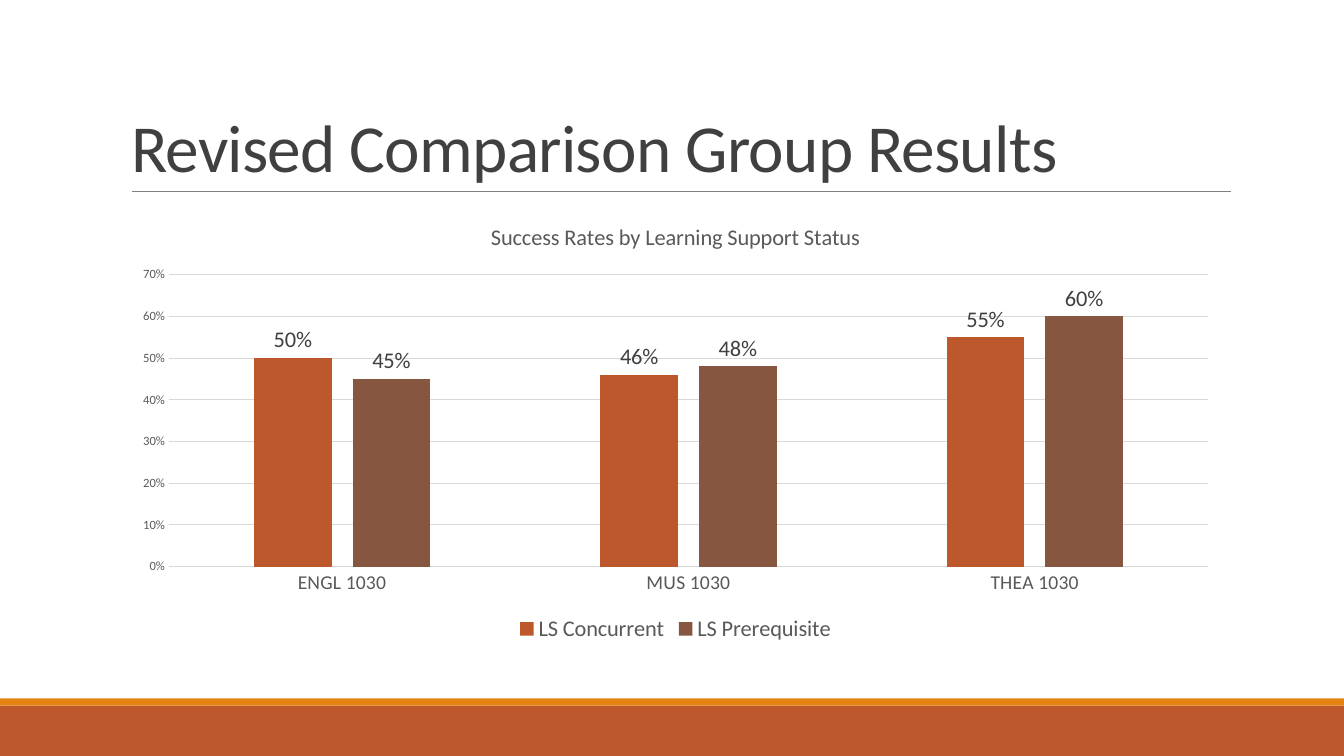
from pptx import Presentation
from pptx.chart.data import CategoryChartData
from pptx.dml.color import RGBColor
from pptx.enum.chart import XL_CHART_TYPE, XL_LABEL_POSITION, XL_LEGEND_POSITION, XL_TICK_MARK
from pptx.enum.shapes import MSO_CONNECTOR, MSO_SHAPE
from pptx.enum.text import MSO_ANCHOR, MSO_AUTO_SIZE, PP_ALIGN
from pptx.oxml.ns import qn
from pptx.util import Inches, Pt
from lxml import etree

COLUMNS = XL_CHART_TYPE.COLUMN_CLUSTERED
OUTSIDE_END = XL_LABEL_POSITION.OUTSIDE_END
LEGEND_BOTTOM = XL_LEGEND_POSITION.BOTTOM
NO_TICK = XL_TICK_MARK.NONE
STRAIGHT = MSO_CONNECTOR.STRAIGHT
RECTANGLE = MSO_SHAPE.RECTANGLE
BOTTOM = MSO_ANCHOR.BOTTOM
NO_AUTO_SIZE = MSO_AUTO_SIZE.NONE
LEFT = PP_ALIGN.LEFT

FONT = "Calibri"
RUST = RGBColor(0xBD, 0x58, 0x2C)
ORANGE = RGBColor(0xE4, 0x83, 0x12)
BROWN = RGBColor(0x86, 0x56, 0x40)
DARK = RGBColor(0x40, 0x40, 0x40)
GRAY = RGBColor(0x59, 0x59, 0x59)
RULE_GRAY = RGBColor(0x80, 0x80, 0x80)
GRID_GRAY = RGBColor(0xD9, 0xD9, 0xD9)

COURSES = ["ENGL 1030", "MUS 1030", "THEA 1030"]
SUCCESS_RATES = [
    ("LS Concurrent", [0.50, 0.46, 0.55], RUST),
    ("LS Prerequisite", [0.45, 0.48, 0.60], BROWN),
]


def style_font(font, size, color):
    """Apply the slide font in a given size and colour."""
    font.name = FONT
    font.size = Pt(size)
    font.bold = False
    font.color.rgb = color


def style_line(line, color, width):
    """Set the colour and width of a line."""
    line.color.rgb = color
    line.width = Pt(width)


def add_footer_bands(page, left, top, width, height):
    """Draw the thin orange band above the rust band."""
    stripe = 0.07
    for offset, depth, color in ((stripe, height - stripe, RUST), (0, stripe, ORANGE)):
        band = page.shapes.add_shape(
            RECTANGLE, Inches(left), Inches(top + offset), Inches(width), Inches(depth))
        band.shadow.inherit = False
        band.fill.solid()
        band.fill.fore_color.rgb = color
        band.line.fill.background()


def add_title(page, left, top, width, height):
    """Place the slide title and the rule beneath it."""
    title = page.shapes.title
    title.left, title.top = Inches(left), Inches(top)
    title.width, title.height = Inches(width), Inches(height)
    frame = title.text_frame
    frame.text = "Revised Comparison Group Results"
    frame.word_wrap = True
    frame.auto_size = NO_AUTO_SIZE
    frame.vertical_anchor = BOTTOM
    para = frame.paragraphs[0]
    para.alignment = LEFT
    para.line_spacing = 0.85
    span = para.runs[0]
    style_font(span.font, 48, DARK)
    span.font._element.set("spc", "-50")

    rule_left, rule_top = left + 0.11, Inches(top + height)
    rule = page.shapes.add_connector(
        STRAIGHT, Inches(rule_left), rule_top, Inches(rule_left + 10.9), rule_top)
    style_line(rule.line, RULE_GRAY, 0.5)
    etree.SubElement(rule._element.spPr, qn("a:effectLst"))


def style_axes(chart):
    """Format the category and value axes."""
    courses, rates = chart.category_axis, chart.value_axis
    for axis, size in ((courses, 14), (rates, 9)):
        axis.major_tick_mark = NO_TICK
        axis.minor_tick_mark = NO_TICK
        style_font(axis.tick_labels.font, size, GRAY)
    style_line(courses.format.line, GRID_GRAY, 0.75)
    rates.minimum_scale, rates.maximum_scale, rates.major_unit = 0, 0.7, 0.1
    rates.tick_labels.number_format = "0%"
    rates.tick_labels.number_format_is_linked = False
    rates.format.line.fill.background()
    style_line(rates.major_gridlines.format.line, GRID_GRAY, 0.75)


def style_series(plot):
    """Colour the columns and label them with their values."""
    plot.gap_width = 219
    plot.overlap = -27
    plot.vary_by_categories = False
    for series, (_, _, color) in zip(plot.series, SUCCESS_RATES):
        series.format.fill.solid()
        series.format.fill.fore_color.rgb = color
        labels = series.data_labels
        labels.show_value = True
        labels.position = OUTSIDE_END
        labels.number_format = "0%"
        labels.number_format_is_linked = False
        style_font(labels.font, 16, DARK)


def add_rates_chart(page, left, top, width, height):
    """Chart success rates by course and learning support status."""
    data = CategoryChartData(number_format="0%")
    data.categories = COURSES
    for name, rates, _ in SUCCESS_RATES:
        data.add_series(name, rates)
    chart = page.shapes.add_chart(
        COLUMNS, Inches(left), Inches(top), Inches(width), Inches(height), data).chart
    style_font(chart.font, 10, GRAY)
    chart.has_title = True
    heading = chart.chart_title.text_frame
    heading.text = "Success Rates by Learning Support Status"
    style_font(heading.paragraphs[0].runs[0].font, 16, GRAY)
    chart.chart_title.include_in_layout = False
    chart.has_legend = True
    chart.legend.position = LEGEND_BOTTOM
    chart.legend.include_in_layout = False
    style_font(chart.legend.font, 16, GRAY)
    style_axes(chart)
    style_series(chart.plots[0])


def main():
    """Build and save the deck."""
    deck = Presentation()
    deck.slide_width, deck.slide_height = Inches(13.33), Inches(7.5)
    page = deck.slides.add_slide(deck.slide_layouts.get_by_name("Title Only"))
    add_footer_bands(page, 0, 6.93, 13.33, 0.57)
    add_title(page, 1.2, 0.31, 11, 1.59)
    add_rates_chart(page, 1.2, 2.02, 11, 4.4)
    deck.save("out.pptx")


if __name__ == "__main__":
    main()
